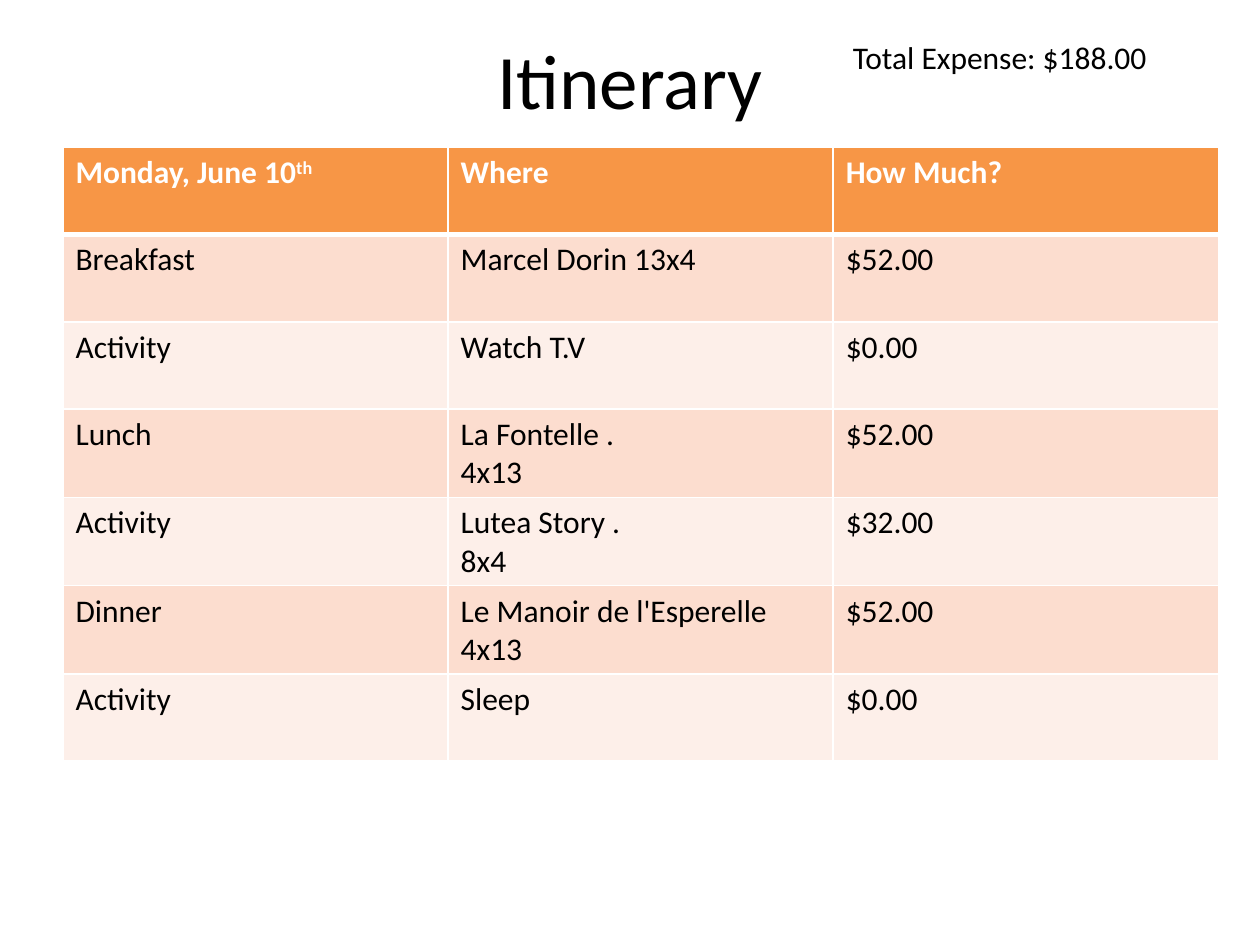
import pptx
import pptx.dml.color
import pptx.enum.text
import pptx.oxml
import pptx.oxml.ns
import pptx.util

Inches = pptx.util.Inches
RGBColor = pptx.dml.color.RGBColor

FONT = "Calibri"
BLACK = RGBColor(0x00, 0x00, 0x00)
WHITE = RGBColor(0xFF, 0xFF, 0xFF)
ORANGE = RGBColor(0xF7, 0x96, 0x46)
PEACH = RGBColor(0xFC, 0xDD, 0xCF)
PALE_PEACH = RGBColor(0xFD, 0xEF, 0xE9)

HEADINGS = ["Monday, June 10", "Where", "How Much?"]
PLANS = [
    ["Breakfast", "Marcel Dorin 13x4", "$52.00"],
    ["Activity", "Watch T.V", "$0.00"],
    ["Lunch", "La Fontelle .\n4x13", "$52.00"],
    ["Activity", "Lutea Story .\n8x4", "$32.00"],
    ["Dinner", "Le Manoir de l'Esperelle\n4x13", "$52.00"],
    ["Activity", "Sleep", "$0.00"],
]


def add_span(para, text, size=18, color=BLACK, bold=False):
    span = para.add_run()
    span.text = text
    span.font.name = FONT
    span.font.size = pptx.util.Pt(size)
    span.font.color.rgb = color
    span.font.bold = bold
    return span


def add_label(page, box, text, size, align, anchor):
    frame = page.shapes.add_textbox(*box).text_frame
    frame.word_wrap = True
    frame.vertical_anchor = anchor
    para = frame.paragraphs[0]
    para.alignment = align
    add_span(para, text, size)


def set_borders(cell, bottom_width):
    """Draw white lines on all four sides, 1 pt except the bottom."""
    properties = cell._tc.get_or_add_tcPr()
    widths = {"lnL": 1, "lnR": 1, "lnT": 1, "lnB": bottom_width}
    for index, (side, width) in enumerate(widths.items()):
        line = pptx.oxml.parse_xml(
            f'<a:{side} {pptx.oxml.ns.nsdecls("a")} w="{pptx.util.Pt(width)}">'
            f'<a:solidFill><a:srgbClr val="{WHITE}"/></a:solidFill></a:{side}>'
        )
        properties.insert(index, line)


def fill_cell(cell, text, fill, color=BLACK, bold=False, bottom_width=1):
    for index, line in enumerate(text.split("\n")):
        frame = cell.text_frame
        para = frame.add_paragraph() if index else frame.paragraphs[0]
        add_span(para, line, color=color, bold=bold)
    cell.fill.solid()
    cell.fill.fore_color.rgb = fill
    set_borders(cell, bottom_width)


def add_itinerary(page, box):
    left, top, width, height = box
    table = page.shapes.add_table(
        len(PLANS) + 1, len(HEADINGS), left, top, width, height
    ).table

    for column, heading in enumerate(HEADINGS):
        fill_cell(table.cell(0, column), heading, ORANGE, WHITE, True, 3)
    date = table.cell(0, 0).text_frame.paragraphs[0]
    ordinal = add_span(date, "th", color=WHITE, bold=True)
    ordinal.font._element.set("baseline", "30000")

    for row, plan in enumerate(PLANS, start=1):
        fill = PEACH if row % 2 else PALE_PEACH
        for column, text in enumerate(plan):
            fill_cell(table.cell(row, column), text, fill)


def main():
    deck = pptx.Presentation()
    deck.slide_width, deck.slide_height = Inches(10), Inches(7.5)
    page = deck.slides.add_slide(deck.slide_layouts[6])
    align = pptx.enum.text.PP_ALIGN
    anchor = pptx.enum.text.MSO_ANCHOR

    title_box = (Inches(0.5), Inches(0), Inches(9), Inches(1.25))
    add_label(page, title_box, "Itinerary", 44, align.CENTER, anchor.MIDDLE)
    total_box = (Inches(6.67), Inches(0.25), Inches(3.08), Inches(0.4))
    add_label(page, total_box, "Total Expense: $188.00", 18, align.LEFT, anchor.TOP)
    add_itinerary(page, (Inches(0.5), Inches(1.17), Inches(9.17), Inches(4.85)))
    deck.save("out.pptx")


if __name__ == "__main__":
    main()
